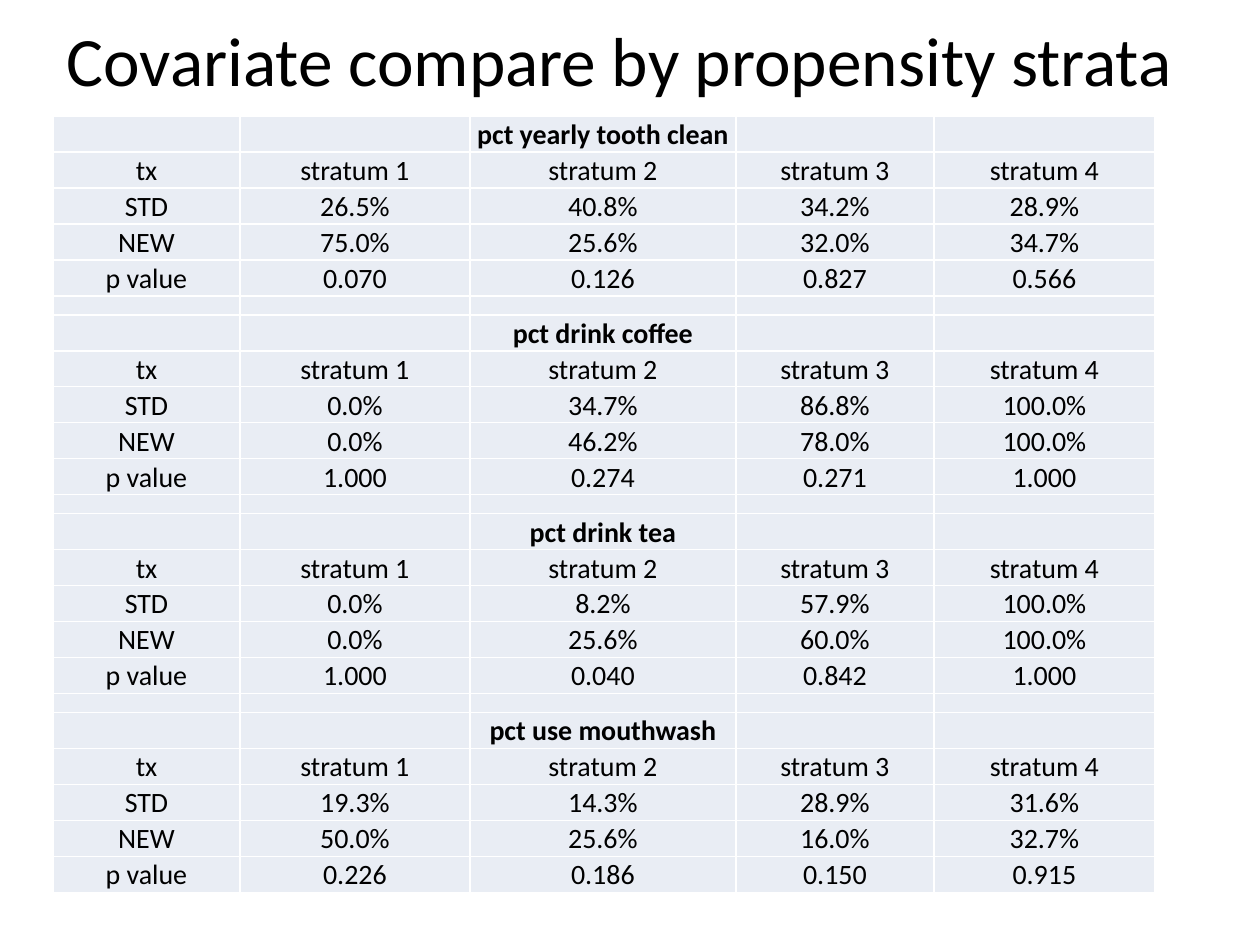
from lxml.etree import SubElement
from pptx import Presentation
from pptx.dml.color import RGBColor
from pptx.enum.text import MSO_ANCHOR as Anchor, PP_ALIGN as Align
from pptx.oxml.ns import qn
from pptx.util import Emu, Pt

EMU_PER_PX = 914400 / 126
BLACK = RGBColor(0x00, 0x00, 0x00)
WHITE = RGBColor(0xFF, 0xFF, 0xFF)
PALE_BLUE = RGBColor(0xE9, 0xED, 0xF4)

TITLE_FORMAT = {"name": "Calibri", "size": Pt(39.6), "bold": False}
BODY_FORMAT = {"name": "Calibri", "size": Pt(16), "bold": False}
HEADING_FORMAT = BODY_FORMAT | {"bold": True}

COLUMN_WIDTHS = [187, 230, 266, 198, 221]
ROW_HEIGHT, SPACER_HEIGHT = 36, 19
BLANK_ROW = [""] * 5
STRATA_ROW = ["tx", "stratum 1", "stratum 2", "stratum 3", "stratum 4"]
ROW_LABELS = ["STD", "NEW", "p value"]
COVARIATES = {
    "pct yearly tooth clean": [
        ["26.5%", "40.8%", "34.2%", "28.9%"],
        ["75.0%", "25.6%", "32.0%", "34.7%"],
        ["0.070", "0.126", "0.827", "0.566"],
    ],
    "pct drink coffee": [
        ["0.0%", "34.7%", "86.8%", "100.0%"],
        ["0.0%", "46.2%", "78.0%", "100.0%"],
        ["1.000", "0.274", "0.271", "1.000"],
    ],
    "pct drink tea": [
        ["0.0%", "8.2%", "57.9%", "100.0%"],
        ["0.0%", "25.6%", "60.0%", "100.0%"],
        ["1.000", "0.040", "0.842", "1.000"],
    ],
    "pct use mouthwash": [
        ["19.3%", "14.3%", "28.9%", "31.6%"],
        ["50.0%", "25.6%", "16.0%", "32.7%"],
        ["0.226", "0.186", "0.150", "0.915"],
    ],
}


def px(length):
    return Emu(round(length * EMU_PER_PX))


def write(paragraph, text, font_format):
    """Add centred black text with the given font settings."""
    paragraph.alignment = Align.CENTER
    run = paragraph.add_run()
    run.text = text
    run.font.color.rgb = BLACK
    for name, value in font_format.items():
        setattr(run.font, name, value)


presentation = Presentation()
presentation.slide_width, presentation.slide_height = px(1260), px(945)
slide = presentation.slides.add_slide(presentation.slide_layouts[6])

title = slide.shapes.add_textbox(px(0), px(10), px(1239), px(98))
title.text_frame.word_wrap = True
title.text_frame.vertical_anchor = Anchor.MIDDLE
write(title.text_frame.paragraphs[0], "Covariate compare by propensity strata", TITLE_FORMAT)

rows = []
for heading, values in COVARIATES.items():
    if rows:
        rows.append(BLANK_ROW)
    rows.append(["", "", heading, "", ""])
    rows.append(STRATA_ROW)
    rows += [[label, *numbers] for label, numbers in zip(ROW_LABELS, values)]
heights = [SPACER_HEIGHT if row == BLANK_ROW else ROW_HEIGHT for row in rows]

table = slide.shapes.add_table(
    len(rows), len(COLUMN_WIDTHS), px(53), px(116), px(sum(COLUMN_WIDTHS)), px(sum(heights))
).table
table.first_row = table.horz_banding = False
for column, width in zip(table.columns, COLUMN_WIDTHS):
    column.width = px(width)

cell_format = {
    "margin_left": px(1), "margin_right": px(1), "margin_top": px(1), "margin_bottom": 0,
    "vertical_anchor": Anchor.BOTTOM,
}
for table_row, height, texts in zip(table.rows, heights, rows):
    table_row.height = px(height)
    for cell, text in zip(table_row.cells, texts):
        for name, value in cell_format.items():
            setattr(cell, name, value)
        properties = cell._tc.get_or_add_tcPr()
        for side in ("a:lnL", "a:lnR", "a:lnT", "a:lnB"):
            border = SubElement(properties, qn(side), w=str(Pt(1)))
            border_fill = SubElement(border, qn("a:solidFill"))
            SubElement(border_fill, qn("a:srgbClr"), val=str(WHITE))
        cell.fill.solid()
        cell.fill.fore_color.rgb = PALE_BLUE
        paragraph = cell.text_frame.paragraphs[0]
        if text:
            write(paragraph, text, HEADING_FORMAT if text in COVARIATES else BODY_FORMAT)
        else:
            # A small end mark keeps an empty cell from stretching its row.
            SubElement(paragraph._p, qn("a:endParaRPr"), sz="800")

presentation.save("out.pptx")
